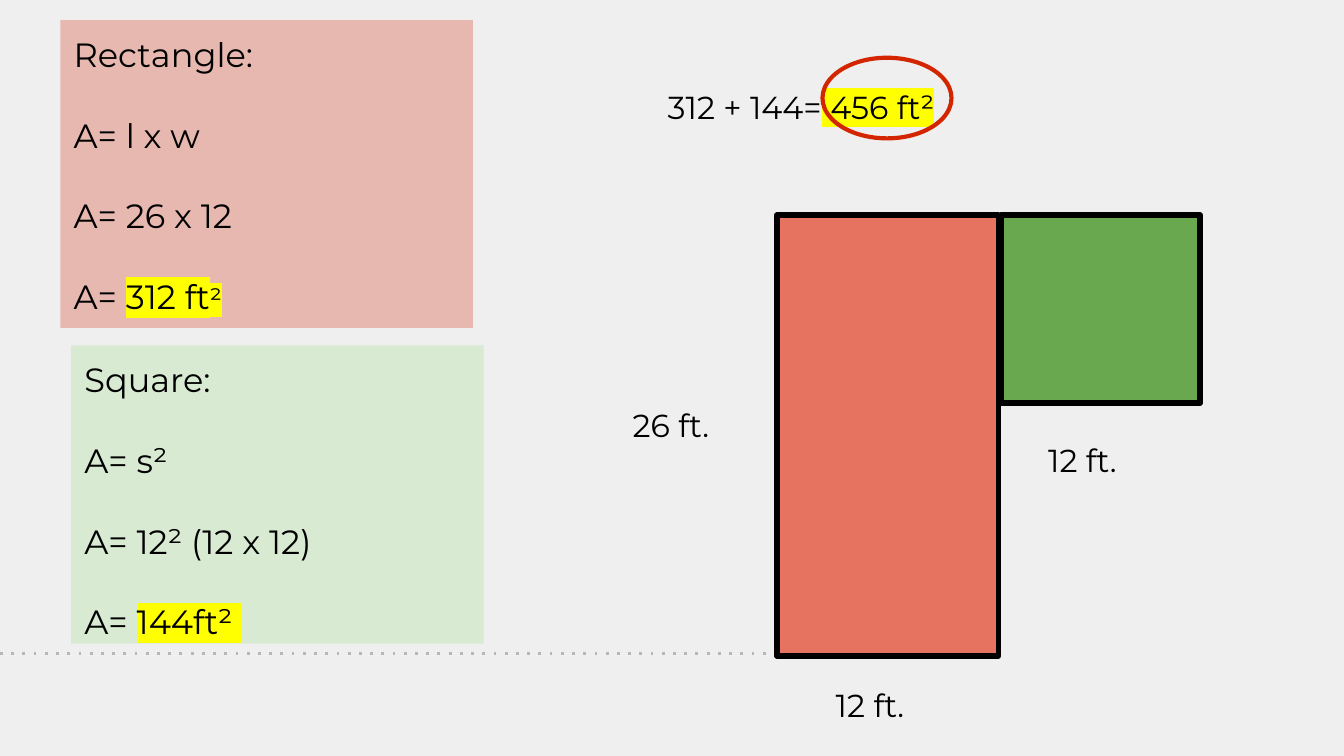
from lxml import etree
from pptx import Presentation
from pptx.dml.color import RGBColor
from pptx.enum.dml import MSO_LINE
from pptx.enum.shapes import MSO_CONNECTOR, MSO_SHAPE
from pptx.enum.text import MSO_ANCHOR, PP_ALIGN
from pptx.oxml.ns import qn
from pptx.util import Inches, Pt

RECTANGLE, OVAL = MSO_SHAPE.RECTANGLE, MSO_SHAPE.OVAL
STRAIGHT, DOTTED = MSO_CONNECTOR.STRAIGHT, MSO_LINE.ROUND_DOT
TOP, LEFT = MSO_ANCHOR.TOP, PP_ALIGN.LEFT

BACKGROUND = RGBColor(0xEF, 0xEF, 0xEF)
GRAY = RGBColor(0xB7, 0xB7, 0xB7)
BLACK = RGBColor(0x00, 0x00, 0x00)
RED = RGBColor(0xD3, 0x26, 0x00)
CORAL = RGBColor(0xE5, 0x73, 0x60)
GREEN = RGBColor(0x6A, 0xA8, 0x4F)
PINK = RGBColor(0xE6, 0xB8, 0xAF)
MINT = RGBColor(0xD9, 0xEA, 0xD3)
YELLOW = RGBColor(0xFF, 0xFF, 0x00)

SLIDE_WIDTH = Inches(10)
SLIDE_HEIGHT = SLIDE_WIDTH * 9 // 16
FONT = "Montserrat"
LABEL_SIZE, WORKING_SIZE, EXPONENT_SIZE = 17, 18, 15
STEP_GAP = 21.7
FRAME = {"word_wrap": True, "vertical_anchor": TOP}
FRAME.update({f"margin_{side}": Inches(0.1) for side in ("left", "top", "right", "bottom")})

BASELINE = (0, 4.86, 5.72, 4.86)
FIGURES = [
    ((5.78, 1.6, 1.65, 3.28), CORAL),
    ((7.45, 1.6, 1.48, 1.4), GREEN),
]
LABELS = [
    ((7.7, 3.18, 0.9, 0.29), [("12 ft.", LABEL_SIZE, None)]),
    ((4.61, 2.92, 0.9, 0.49), [("26 ft.", LABEL_SIZE, None)]),
    ((6.12, 5, 0.9, 0.29), [("12 ft.", LABEL_SIZE, None)]),
    ((4.87, 0.55, 3.5, 0.37), [("312 + 144=", LABEL_SIZE, None), (" 456 ft²", LABEL_SIZE, YELLOW)]),
]
WORKINGS = [
    ((0.45, 0.15, 3.07, 2.29), PINK, ["Rectangle:", "A= l x w", "A= 26 x 12"],
     [("312 ft", WORKING_SIZE, YELLOW), ("²", EXPONENT_SIZE, YELLOW)]),
    ((0.53, 2.57, 3.07, 2.22), MINT, ["Square:", "A= s²", "A= 12² (12 x 12)"],
     [("144ft² ", WORKING_SIZE, YELLOW)]),
]
ANSWER_RING = (6.12, 0.43, 0.96, 0.6)


def add_box(slide, kind, place, fill=None, line=None, width=0):
    shape = slide.shapes.add_shape(kind, *map(Inches, place))
    shape.shadow.inherit = False
    if fill is None:
        shape.fill.background()
    else:
        shape.fill.solid()
        shape.fill.fore_color.rgb = fill
    if line is None:
        shape.line.fill.background()
    else:
        shape.line.color.rgb = line
        shape.line.width = Pt(width)
    return shape


def write(shape, lines):
    frame = shape.text_frame
    for name, value in FRAME.items():
        setattr(frame, name, value)
    for index, pieces in enumerate(lines):
        paragraph = frame.add_paragraph() if index else frame.paragraphs[0]
        paragraph.alignment = LEFT
        if index:
            paragraph.space_before = Pt(STEP_GAP)
        for text, size, highlight in pieces:
            run = paragraph.add_run()
            run.text = text
            for name, value in {"name": FONT, "size": Pt(size)}.items():
                setattr(run.font, name, value)
            run.font.color.rgb = BLACK
            if highlight is not None:
                mark = etree.Element(qn("a:highlight"))
                etree.SubElement(mark, qn("a:srgbClr"), val=str(highlight))
                run.font._element.find(qn("a:solidFill")).addnext(mark)


def add_baseline(slide):
    connector = slide.shapes.add_connector(STRAIGHT, *map(Inches, BASELINE))
    connector.line.color.rgb = GRAY
    connector.line.width = Pt(1.5)
    connector.line.dash_style = DOTTED
    properties = connector._element.spPr
    properties.find(".//" + qn("a:prstDash")).set("val", "dot")
    etree.SubElement(properties, qn("a:effectLst"))


def main():
    presentation = Presentation()
    presentation.slide_width, presentation.slide_height = SLIDE_WIDTH, SLIDE_HEIGHT
    slide = presentation.slides.add_slide(presentation.slide_layouts[6])
    slide.background.fill.solid()
    slide.background.fill.fore_color.rgb = BACKGROUND

    add_baseline(slide)
    for place, fill in FIGURES:
        add_box(slide, RECTANGLE, place, fill, BLACK, 3)
    for place, fill, steps, answer in WORKINGS:
        lines = [[(step, WORKING_SIZE, None)] for step in steps]
        lines.append([("A= ", WORKING_SIZE, None)] + answer)
        write(add_box(slide, RECTANGLE, place, fill), lines)
    for place, pieces in LABELS:
        write(slide.shapes.add_textbox(*map(Inches, place)), [pieces])
    add_box(slide, OVAL, ANSWER_RING, line=RED, width=2.25)

    presentation.save("out.pptx")


if __name__ == "__main__":
    main()
